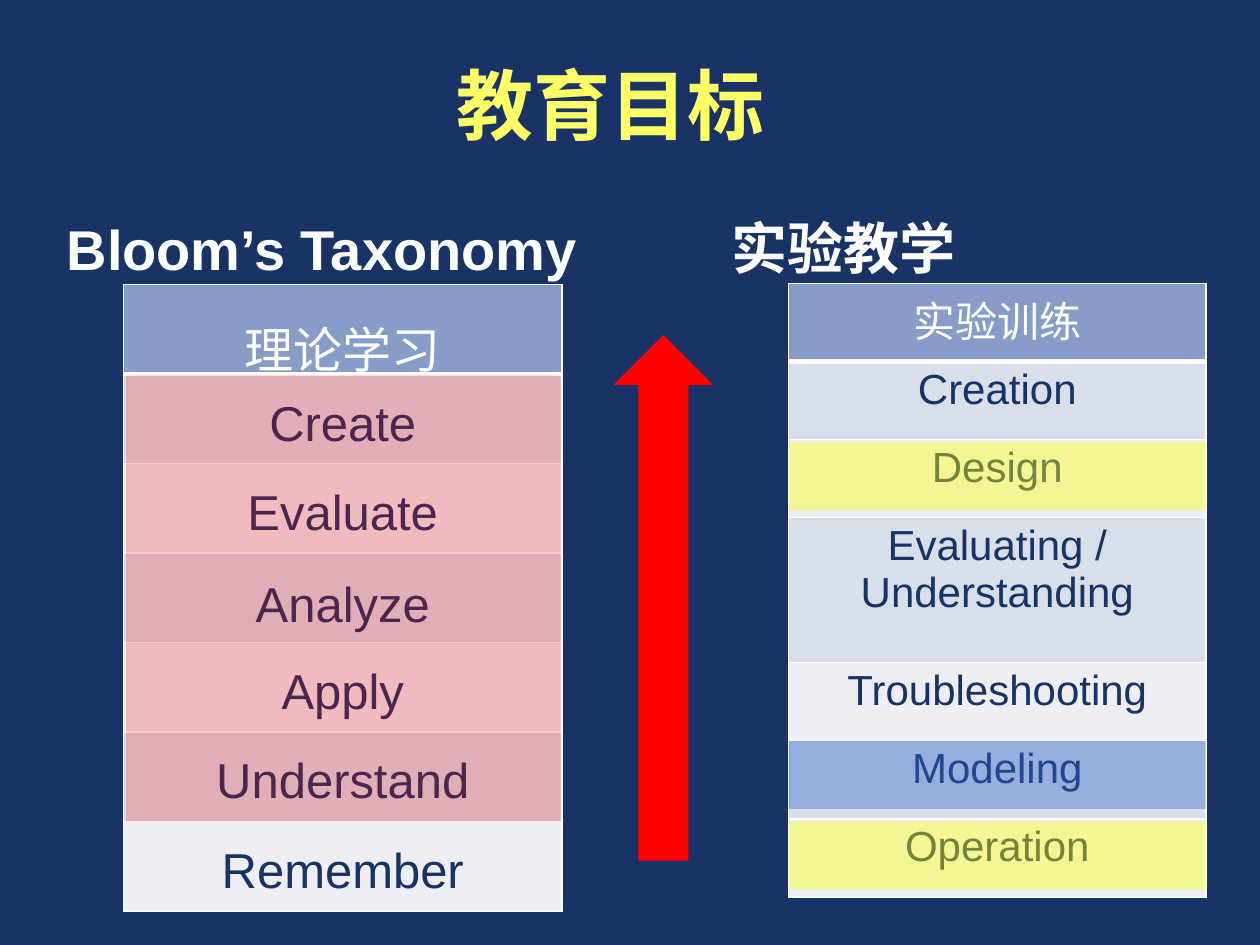
from dataclasses import dataclass

from lxml.etree import SubElement
from pptx import Presentation
from pptx.dml.color import RGBColor
from pptx.enum.shapes import MSO_SHAPE
from pptx.enum.text import MSO_ANCHOR, PP_ALIGN
from pptx.oxml import parse_xml
from pptx.oxml.ns import nsdecls, qn
from pptx.slide import Slide
from pptx.table import _Cell
from pptx.text.text import TextFrame, _Paragraph
from pptx.util import Pt

EMU_PER_PX = 9144
NAVY, WHITE, YELLOW, RED = "193366", "FFFFFF", "FFFF66", "FF0000"
HEADER_FILL, BAND_FILLS = "879CC8", ("D9DEEB", "EDEFF5")
LATIN_FONT, ASIAN_FONT = "Arial", "Noto Sans CJK SC"


@dataclass(frozen=True)
class Box:
    left: int
    top: int
    width: int
    height: int


@dataclass(frozen=True)
class Heading:
    text: str
    box: Box
    font: str


@dataclass(frozen=True)
class Block:
    shape: MSO_SHAPE
    box: Box
    fill: str
    opacity: int = 100


@dataclass(frozen=True)
class LevelTable:
    box: Box
    row_heights: tuple[int, ...]
    levels: tuple[str, ...]
    size: int
    line_spacing: float
    margins: tuple[int, int]
    middle_rows: tuple[int, ...] = ()


HEADINGS = (
    Heading("Bloom’s Taxonomy", Box(43, 139, 449, 94), LATIN_FONT),
    Heading("实验教学", Box(571, 138, 449, 94), ASIAN_FONT),
)
THEORY = LevelTable(
    Box(98, 226, 348, 497), (71,) * 7,
    ("理论学习", "Create", "Evaluate", "Analyze", "Apply", "Understand", "Remember"),
    28, 1.3, (10, 5), (3,),
)
LABORATORY = LevelTable(
    Box(626, 225, 331, 488), (62, 62, 62, 115, 62, 62, 62),
    ("实验训练", "Creation", "Design", "Evaluating / Understanding",
     "Troubleshooting", "Modeling", "Operation"),
    24, 1.0, (8, 4),
)
THEORY_BLOCKS = (
    Block(MSO_SHAPE.UP_ARROW, Box(487, 266, 79, 417), RED),
    Block(MSO_SHAPE.RECTANGLE, Box(100, 298, 345, 354), RED, 22),
)
LABORATORY_BLOCKS = tuple(
    Block(MSO_SHAPE.RECTANGLE, Box(626, top, 331, 54), fill, 40)
    for top, fill in ((652, "FFFF00"), (351, "FFFF00"), (588, "3366CC"))
)


def px(length: int) -> int:
    """Turn px into EMU."""
    return length * EMU_PER_PX


def place(box: Box) -> tuple[int, int, int, int]:
    """Return the box in EMU."""
    return px(box.left), px(box.top), px(box.width), px(box.height)


def color(value: str) -> RGBColor:
    """Return the colour of a hex string."""
    return RGBColor.from_string(value)


def write(frame: TextFrame, text: str, size: int, fill: str,
          bold: bool = False, font: str = LATIN_FONT) -> _Paragraph:
    """Write one formatted paragraph into a text frame."""
    frame.text = text
    paragraph = frame.paragraphs[0]
    for run in paragraph.runs:
        run.font.name = font
        run.font.size = Pt(size)
        run.font.bold = bold
        run.font.color.rgb = color(fill)
        SubElement(run.font._element, qn("a:ea"), typeface=ASIAN_FONT)
    return paragraph


def add_title(slide: Slide, text: str, box: Box) -> None:
    """Move and format the title placeholder."""
    title = slide.shapes.title
    title.left, title.top, title.width, title.height = place(box)
    title.text_frame.vertical_anchor = MSO_ANCHOR.MIDDLE
    write(title.text_frame, text, 44, YELLOW, True).alignment = PP_ALIGN.CENTER


def add_heading(slide: Slide, heading: Heading) -> None:
    """Add a column heading."""
    frame = slide.shapes.add_textbox(*place(heading.box)).text_frame
    frame.word_wrap = True
    paragraph = write(frame, heading.text, 32, WHITE, True, heading.font)
    paragraph.line_spacing = 1.5
    paragraph.space_before = Pt(6.4)


def add_block(slide: Slide, block: Block) -> None:
    """Add a filled shape without outline."""
    shape = slide.shapes.add_shape(block.shape, *place(block.box))
    shape.shadow.inherit = False
    shape.line.fill.background()
    shape.fill.solid()
    shape.fill.fore_color.rgb = color(block.fill)
    if block.opacity < 100:
        tint = shape._element.spPr.find(f".//{qn('a:srgbClr')}")
        SubElement(tint, qn("a:alpha"), val=str(block.opacity * 1000))


def set_borders(cell: _Cell, bottom_points: int) -> None:
    """Draw white borders around a cell."""
    properties = cell._tc.get_or_add_tcPr()
    for index, side in enumerate("LRTB"):
        width = Pt(bottom_points if side == "B" else 1)
        properties.insert(index, parse_xml(
            f'<a:ln{side} {nsdecls("a")} w="{width}"><a:solidFill>'
            f'<a:srgbClr val="{WHITE}"/></a:solidFill></a:ln{side}>'
        ))


def add_level_table(slide: Slide, data: LevelTable) -> None:
    """Add a one-column table with a header and banded levels."""
    table = slide.shapes.add_table(len(data.levels), 1, *place(data.box)).table
    table.first_row = table.horz_banding = False
    for index, (level, height) in enumerate(zip(data.levels, data.row_heights)):
        is_header = index == 0
        table.rows[index].height = px(height)
        cell = table.cell(index, 0)
        cell.margin_left = cell.margin_right = px(data.margins[0])
        cell.margin_top = cell.margin_bottom = px(data.margins[1])
        cell.vertical_anchor = MSO_ANCHOR.MIDDLE if index in data.middle_rows else MSO_ANCHOR.TOP
        cell.fill.solid()
        cell.fill.fore_color.rgb = color(HEADER_FILL if is_header else BAND_FILLS[(index - 1) % 2])
        set_borders(cell, 3 if is_header else 1)
        paragraph = write(cell.text_frame, level, data.size, WHITE if is_header else NAVY)
        paragraph.alignment = PP_ALIGN.CENTER
        paragraph.line_spacing = data.line_spacing


def main() -> None:
    """Build and save the slide."""
    presentation = Presentation()
    presentation.slide_width, presentation.slide_height = px(1000), px(750)
    slide = presentation.slides.add_slide(presentation.slide_layouts[5])
    slide.background.fill.solid()
    slide.background.fill.fore_color.rgb = color(NAVY)
    add_title(slide, "教育目标", Box(28, 35, 913, 94))
    for heading in HEADINGS:
        add_heading(slide, heading)
    for table, blocks in ((THEORY, THEORY_BLOCKS), (LABORATORY, LABORATORY_BLOCKS)):
        add_level_table(slide, table)
        for block in blocks:
            add_block(slide, block)
    presentation.save("out.pptx")


if __name__ == "__main__":
    main()
